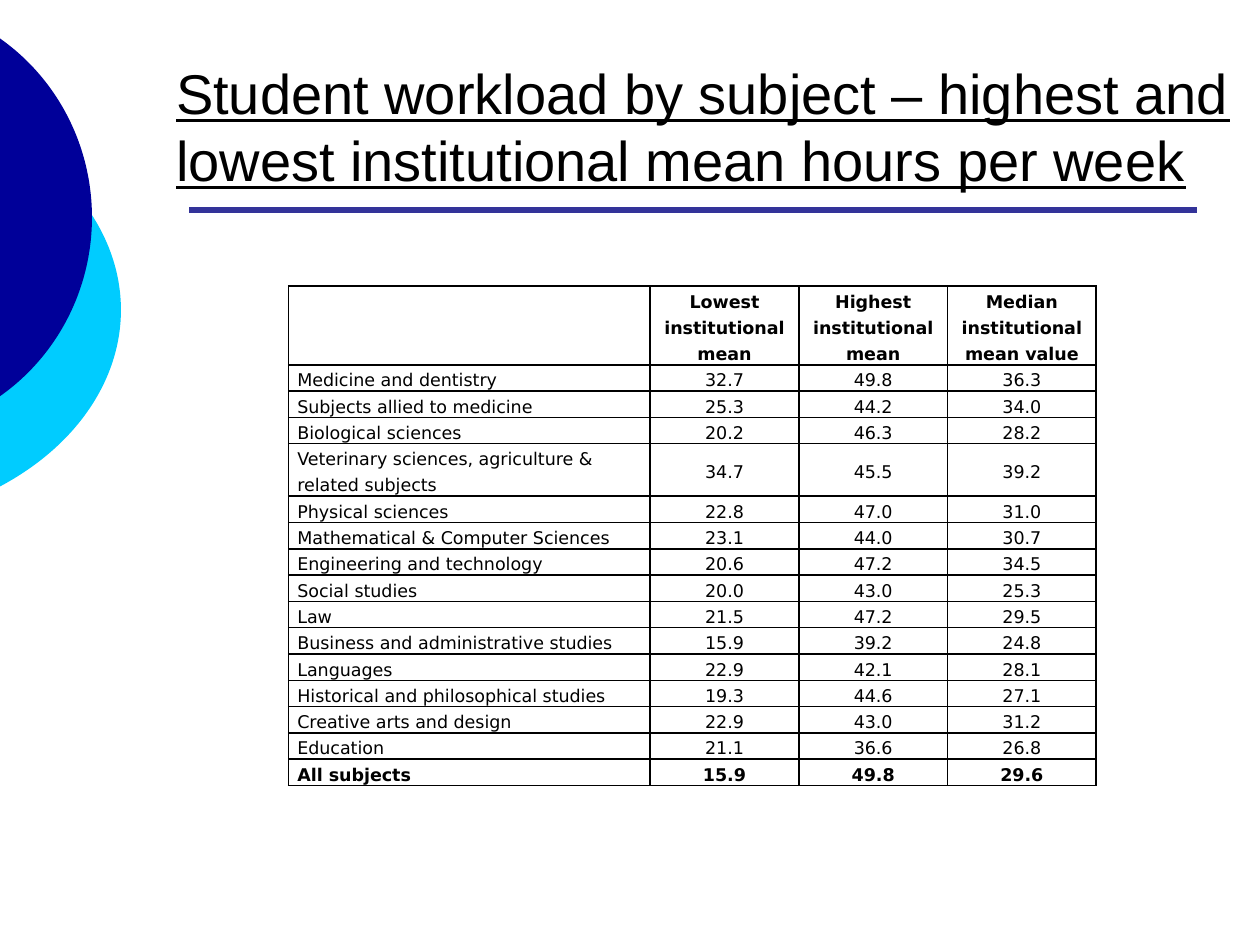
from lxml import etree
from pptx import Presentation
from pptx import util as u
from pptx.dml.color import RGBColor
from pptx.enum import shapes, text
from pptx.oxml.ns import qn

HEADER = ["", "Lowest institutional mean", "Highest institutional mean",
          "Median institutional mean value"]
SUBJECTS = [
    ("Medicine and dentistry", "32.7", "49.8", "36.3"),
    ("Subjects allied to medicine", "25.3", "44.2", "34.0"),
    ("Biological sciences", "20.2", "46.3", "28.2"),
    ("Veterinary sciences, agriculture & related subjects", "34.7", "45.5", "39.2"),
    ("Physical sciences", "22.8", "47.0", "31.0"),
    ("Mathematical & Computer Sciences", "23.1", "44.0", "30.7"),
    ("Engineering and technology", "20.6", "47.2", "34.5"),
    ("Social studies", "20.0", "43.0", "25.3"),
    ("Law", "21.5", "47.2", "29.5"),
    ("Business and administrative studies", "15.9", "39.2", "24.8"),
    ("Languages", "22.9", "42.1", "28.1"),
    ("Historical and philosophical studies", "19.3", "44.6", "27.1"),
    ("Creative arts and design", "22.9", "43.0", "31.2"),
    ("Education", "21.1", "36.6", "26.8"),
]
TOTAL = ("All subjects", "15.9", "49.8", "29.6")


def color(value):
    return RGBColor.from_string(value)


def apply(target, values):
    for name, value in values.items():
        setattr(target, name, value)


class SlideBuilder:
    title_font = {"name": "Arial", "size": u.Pt(32), "underline": True}
    table_font = {"name": "DejaVu Sans", "size": u.Pt(10)}
    ink = "000000"
    cell_format = {"margin_left": u.Inches(0.07), "margin_right": u.Inches(0.07),
                   "margin_top": 0, "margin_bottom": 0}

    def __init__(self, slide):
        self.slide = slide

    def add_text(self, paragraph, content, font, **layout):
        apply(paragraph, layout)
        run = paragraph.add_run()
        run.text = content
        apply(run.font, font)
        run.font.color.rgb = color(self.ink)

    def ellipse(self, left, top, width, height, fill):
        shape = self.slide.shapes.add_shape(
            shapes.MSO_SHAPE.OVAL, *map(u.Inches, (left, top, width, height)))
        shape.shadow.inherit = False
        shape.fill.solid()
        shape.fill.fore_color.rgb = color(fill)
        shape.line.fill.background()

    def rule(self, left, right, y, stroke, width):
        line = self.slide.shapes.add_connector(
            shapes.MSO_CONNECTOR.STRAIGHT, *map(u.Inches, (left, y, right, y)))
        line.line.color.rgb = color(stroke)
        line.line.width = u.Pt(width)
        etree.SubElement(line._element.spPr, qn("a:effectLst"))

    def title(self, left, top, width, height, content):
        box = self.slide.shapes.add_textbox(*map(u.Inches, (left, top, width, height)))
        apply(box.text_frame, {"word_wrap": True,
                               "vertical_anchor": text.MSO_ANCHOR.BOTTOM})
        self.add_text(box.text_frame.paragraphs[0], content, self.title_font)

    def borders(self, cell):
        properties = cell._tc.get_or_add_tcPr()
        for index, side in enumerate(("lnL", "lnR", "lnT", "lnB")):
            line = etree.Element(qn(f"a:{side}"), w=str(u.Pt(1)))
            fill = etree.SubElement(line, qn("a:solidFill"))
            etree.SubElement(fill, qn("a:srgbClr"), val=self.ink)
            properties.insert(index, line)

    def cell(self, cell, content, is_label, is_header, bold):
        apply(cell, self.cell_format)
        cell.vertical_anchor = (text.MSO_ANCHOR.BOTTOM if is_label
                                else text.MSO_ANCHOR.MIDDLE)
        cell.fill.background()
        self.borders(cell)
        if content:
            self.add_text(cell.text_frame.paragraphs[0], content,
                          {**self.table_font, "bold": bold},
                          alignment=text.PP_ALIGN.LEFT if is_label else text.PP_ALIGN.CENTER,
                          line_spacing=u.Pt(15),
                          space_after=u.Pt(3 if is_header else 0))

    def table(self, left, top, height, column_widths, row_height, rows):
        frame = self.slide.shapes.add_table(
            len(rows), len(column_widths), u.Inches(left), u.Inches(top),
            u.Inches(sum(column_widths)), u.Inches(height))
        table = frame.table
        apply(table, {"first_row": False, "horz_banding": False})
        for column, width in zip(table.columns, column_widths):
            column.width = u.Inches(width)
        last = len(rows) - 1
        for r, values in enumerate(rows):
            table.rows[r].height = u.Inches(row_height)
            for c, content in enumerate(values):
                self.cell(table.cell(r, c), content, is_label=c == 0,
                          is_header=r == 0, bold=r in (0, last))
        frame.height = u.Inches(height)


def main():
    presentation = Presentation()
    presentation.slide_width = u.Inches(10)
    presentation.slide_height = u.Inches(7.5)
    builder = SlideBuilder(presentation.slides.add_slide(presentation.slide_layouts[6]))

    # Decoration at the left edge and rule below the title
    builder.ellipse(-3.54, 0.75, 4.5, 3.42, "00CCFF")
    builder.ellipse(-2.65, 0, 3.38, 3.45, "000099")
    builder.rule(1.5, 9.5, 1.67, "333399", 3.5)

    # Title
    builder.title(1.3, 0.33, 8.7, 1.25, "Student workload by subject – highest and "
                  "lowest institutional mean hours per week")

    # Workload table; rows grow to fit their text
    builder.table(2.29, 2.27, 3.96, [2.87] + [1.18] * 3, 0.18,
                  [HEADER, *SUBJECTS, TOTAL])

    presentation.save("out.pptx")


if __name__ == "__main__":
    main()
